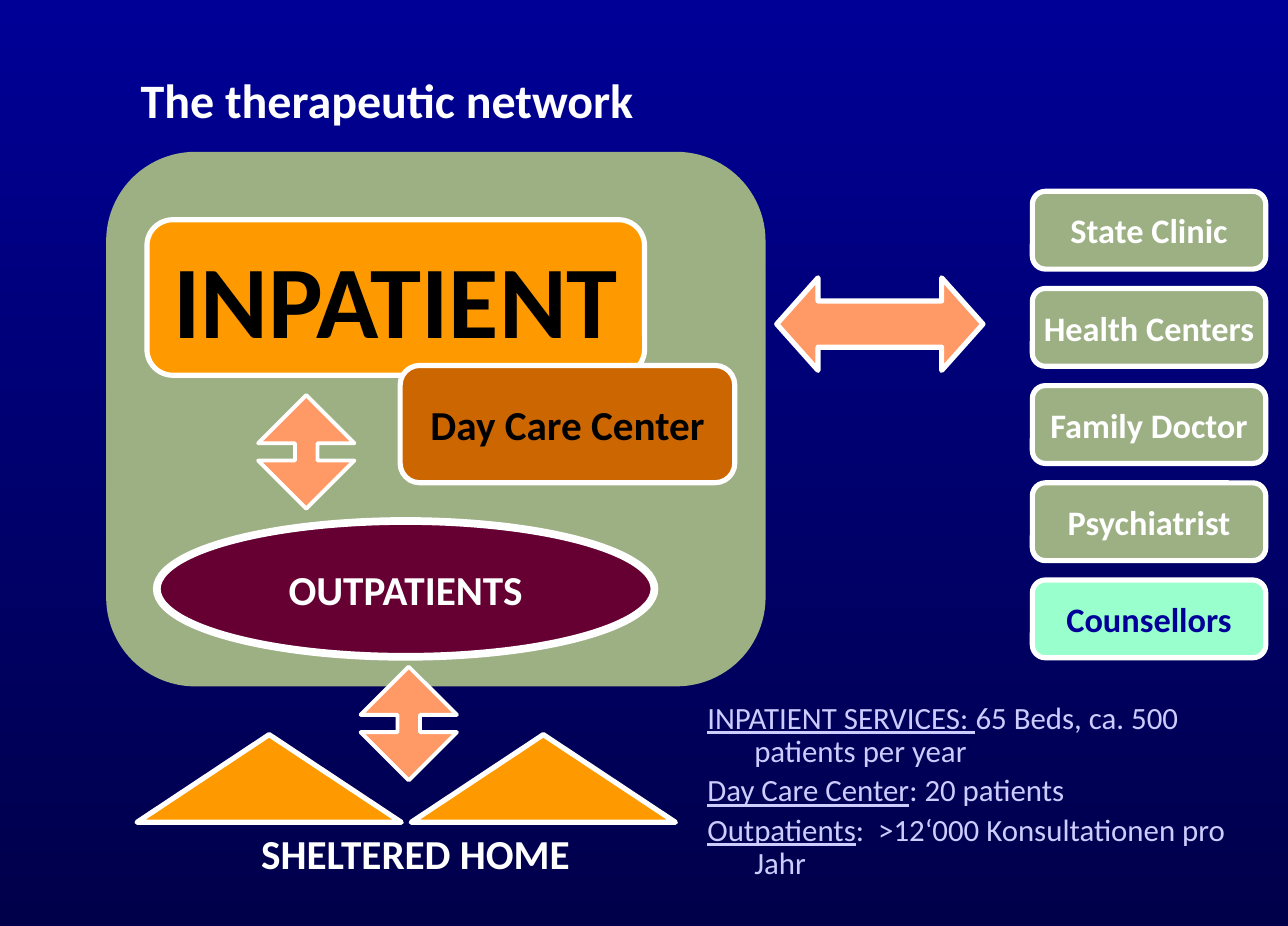
from pptx import Presentation
from pptx.dml.color import RGBColor
from pptx.enum.shapes import MSO_SHAPE
from pptx.enum.text import MSO_ANCHOR, PP_ALIGN
from pptx.util import Inches, Pt

ROUND, OVAL = MSO_SHAPE.ROUNDED_RECTANGLE, MSO_SHAPE.OVAL
TRIANGLE = MSO_SHAPE.ISOSCELES_TRIANGLE
VERTICAL, HORIZONTAL = MSO_SHAPE.UP_DOWN_ARROW, MSO_SHAPE.LEFT_RIGHT_ARROW
MIDDLE, TOP = MSO_ANCHOR.MIDDLE, MSO_ANCHOR.TOP
LEFT, CENTER = PP_ALIGN.LEFT, PP_ALIGN.CENTER

COLORS = {
    "sky": "000096", "night": "00004A", "sage": "9CB084", "orange": "FF9900",
    "brown": "CC6600", "wine": "660033", "salmon": "FF9966", "mint": "99FFCC",
    "navy": "000099", "lilac": "CCCCFF", "white": "FFFFFF", "black": "000000",
}


class Deck:
    """Hold the style and the current slide, on a grid of tenth-inch cells."""

    cell = Inches(0.1)
    font = "Calibri"

    def __init__(self, columns, rows):
        """Open a presentation that is the given number of cells in size."""
        self.prs = Presentation()
        self.prs.slide_width, self.prs.slide_height = self.grid(columns, rows)
        self.s = self.prs.slides.add_slide(self.prs.slide_layouts[6])

    def grid(self, *cells):
        """Turn cell counts into lengths."""
        return [round(c * self.cell) for c in cells]

    def color(self, name):
        """Look up a named colour."""
        return RGBColor.from_string(COLORS[name])

    def background(self, top, bottom):
        """Fill the slide with a vertical gradient."""
        fill = self.s.background.fill
        fill.gradient()
        fill.gradient_angle = 270
        for stop, name, position in zip(fill.gradient_stops, (top, bottom), (0, 1)):
            stop.color.rgb = self.color(name)
            stop.position = position

    def run(self, p, text, size, color, bold=False, underline=False):
        """Add one styled run to a paragraph."""
        r = p.add_run()
        r.text = text
        r.font.name = self.font
        r.font.size = Pt(size)
        r.font.bold = bold
        r.font.underline = underline
        r.font.color.rgb = self.color(color)

    def shape(self, kind, at, fill, line=0, adjust=()):
        """Draw a filled shape, outlined in white when line is given."""
        sp = self.s.shapes.add_shape(kind, *self.grid(*at))
        sp.shadow.inherit = False
        for i, value in enumerate(adjust):
            sp.adjustments[i] = value
        sp.fill.solid()
        sp.fill.fore_color.rgb = self.color(fill)
        if line:
            sp.line.color.rgb = self.color("white")
            sp.line.width = Pt(line)
        else:
            sp.line.fill.background()
        return sp

    def label(self, kind, at, fill, line, text, size, color):
        """Draw a shape with one bold centred line of text."""
        tf = self.shape(kind, at, fill, line).text_frame
        tf.word_wrap = False
        tf.vertical_anchor = MIDDLE
        p = tf.paragraphs[0]
        p.alignment = CENTER
        self.run(p, text, size, color, bold=True)

    def textbox(self, at, anchor=TOP):
        """Add a wrapping text box and return its frame."""
        tf = self.s.shapes.add_textbox(*self.grid(*at)).text_frame
        tf.word_wrap = True
        tf.vertical_anchor = anchor
        return tf

    def heading(self, at, text, size, align, anchor=TOP):
        """Add a bold white line of text."""
        p = self.textbox(at, anchor).paragraphs[0]
        p.alignment = align
        self.run(p, text, size, "white", bold=True)

    def facts(self, at, rows, size, color, hang):
        """List underlined terms with their values, on a hanging indent."""
        tf = self.textbox(at)
        indent, = self.grid(hang)
        for i, (term, value) in enumerate(rows):
            p = tf.add_paragraph() if i else tf.paragraphs[0]
            pPr = p._p.get_or_add_pPr()
            pPr.set("marL", str(indent))
            pPr.set("indent", str(-indent))
            p.line_spacing = 0.9
            if i:
                p.space_before = Pt(0.2 * size)
            self.run(p, term, size, color, underline=True)
            self.run(p, value, size, color)


def main():
    """Build the therapeutic network slide."""
    deck = Deck(104.3, 75)
    deck.background("sky", "night")
    deck.shape(ROUND, (8.6, 12.3, 53.4, 43.3), "sage")
    deck.heading((10.4, 4.4, 90.2, 7.2), "The therapeutic network", 28, LEFT, MIDDLE)

    deck.label(ROUND, (11.9, 17.8, 40.3, 12.6), "orange", 3, "INPATIENT", 60, "black")
    deck.label(ROUND, (32.4, 29.6, 27.1, 9.5), "brown", 3, "Day Care Center", 24, "black")
    deck.label(OVAL, (12.7, 42.2, 40.3, 11), "wine", 4.5, "OUTPATIENTS", 24, "white")

    for left in (11.1, 33.3):
        deck.shape(TRIANGLE, (left, 59.5, 21.4, 7.1), "orange", 3)
    deck.heading((17.7, 66.6, 31.9, 5), "SHELTERED HOME", 24, CENTER)

    for left, top in ((20.9, 32), (29.2, 54)):
        deck.shape(VERTICAL, (left, top, 7.8, 9.2), "salmon", 2.25, (0.5, 0.234))
    deck.shape(HORIZONTAL, (62.9, 22.5, 16.7, 7.5), "salmon", 3, (0.5, 0.446))

    partners = [
        ("State Clinic", "sage", "white"),
        ("Health Centers", "sage", "white"),
        ("Family Doctor", "sage", "white"),
        ("Psychiatrist", "sage", "white"),
        ("Counsellors", "mint", "navy"),
    ]
    for i, (name, fill, color) in enumerate(partners):
        at = (83.6, 15.5 + 7.87 * i, 18.9, 6.3)
        deck.label(ROUND, at, fill, 3, name, 20, color)

    deck.facts((56.3, 56.4, 48, 16), [
        ("INPATIENT SERVICES: ", "65 Beds, ca. 500 patients per year"),
        ("Day Care Center", ": 20 patients"),
        ("Outpatients", ":  >12‘000 Konsultationen pro Jahr"),
    ], 18, "lilac", 3.8)
    deck.prs.save("out.pptx")


if __name__ == "__main__":
    main()
